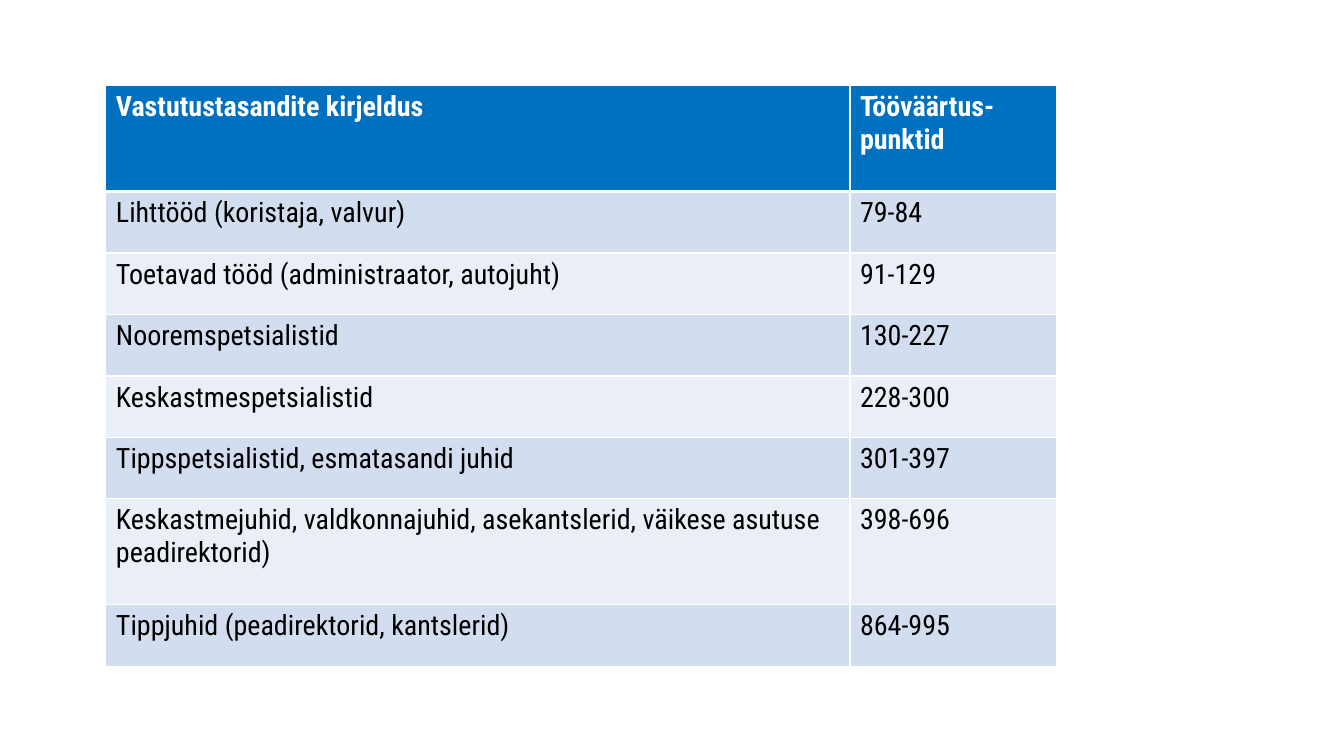
import dataclasses

import pptx
import pptx.dml.color
import pptx.oxml
import pptx.oxml.ns
import pptx.util

Inches = pptx.util.Inches
Pt = pptx.util.Pt


@dataclasses.dataclass(frozen=True)
class Theme:
    font: str = "Roboto Condensed"
    text_size: int = 20
    header_fill: str = "0070C0"
    header_text: str = "FFFFFF"
    body_text: str = "000000"
    bands: tuple = ("D2DEEF", "EAEFF7")
    border: str = "FFFFFF"
    thin: int = 1
    thick: int = 3


HEADER = ("Vastutustasandite kirjeldus", "Tööväärtus-\npunktid")
LEVELS = [
    ("Lihttööd (koristaja, valvur)", "79-84"),
    ("Toetavad tööd (administraator, autojuht)", "91-129"),
    ("Nooremspetsialistid", "130-227"),
    ("Keskastmespetsialistid", "228-300"),
    ("Tippspetsialistid, esmatasandi juhid", "301-397"),
    ("Keskastmejuhid, valdkonnajuhid, asekantslerid, väikese asutuse peadirektorid)", "398-696"),
    ("Tippjuhid (peadirektorid, kantslerid)", "864-995"),
]
COLUMN_WIDTHS = (7.38, 2.05)
SINGLE_ROW, TALL_ROW = 0.61, 1.05
ROW_HEIGHTS = [TALL_ROW] + [SINGLE_ROW] * 5 + [TALL_ROW, SINGLE_ROW]


def rgb(color):
    return pptx.dml.color.RGBColor.from_string(color)


class SlideBuilder:
    def __init__(self, slide, theme):
        self.slide = slide
        self.theme = theme

    def borders(self, cell, widths):
        """Draw cell borders; widths maps a side (L, R, T, B) to points."""
        properties = cell._tc.get_or_add_tcPr()
        for side, width in widths.items():
            properties.append(pptx.oxml.parse_xml(
                f'<a:ln{side} {pptx.oxml.ns.nsdecls("a")} w="{Pt(width)}">'
                f'<a:solidFill><a:srgbClr val="{self.theme.border}"/></a:solidFill>'
                f'</a:ln{side}>'))

    def cell(self, cell, text, row):
        theme = self.theme
        is_header = row == 0
        self.borders(cell, {
            "L": theme.thin,
            "R": theme.thin,
            "T": theme.thick if row == 1 else theme.thin,
            "B": theme.thick if is_header else theme.thin,
        })
        cell.fill.solid()
        cell.fill.fore_color.rgb = rgb(
            theme.header_fill if is_header else theme.bands[(row - 1) % 2])
        cell.text = text
        for paragraph in cell.text_frame.paragraphs:
            font = paragraph.font
            font.name = theme.font
            font.size = Pt(theme.text_size)
            font.bold = is_header
            font.color.rgb = rgb(theme.header_text if is_header else theme.body_text)

    def table(self, left, top, rows, widths, heights):
        table = self.slide.shapes.add_table(
            len(rows), len(widths), Inches(left), Inches(top),
            Inches(sum(widths)), Inches(sum(heights))).table
        for column, width in zip(table.columns, widths):
            column.width = Inches(width)
        for table_row, height in zip(table.rows, heights):
            table_row.height = Inches(height)
        for row, texts in enumerate(rows):
            for column, text in enumerate(texts):
                self.cell(table.cell(row, column), text, row)


def main():
    presentation = pptx.Presentation()
    presentation.slide_width = Inches(13.33)
    presentation.slide_height = Inches(7.5)
    slide = presentation.slides.add_slide(presentation.slide_layouts[6])
    builder = SlideBuilder(slide, Theme())
    builder.table(1.05, 0.85, [HEADER] + LEVELS, COLUMN_WIDTHS, ROW_HEIGHTS)
    presentation.save("out.pptx")


if __name__ == "__main__":
    main()
